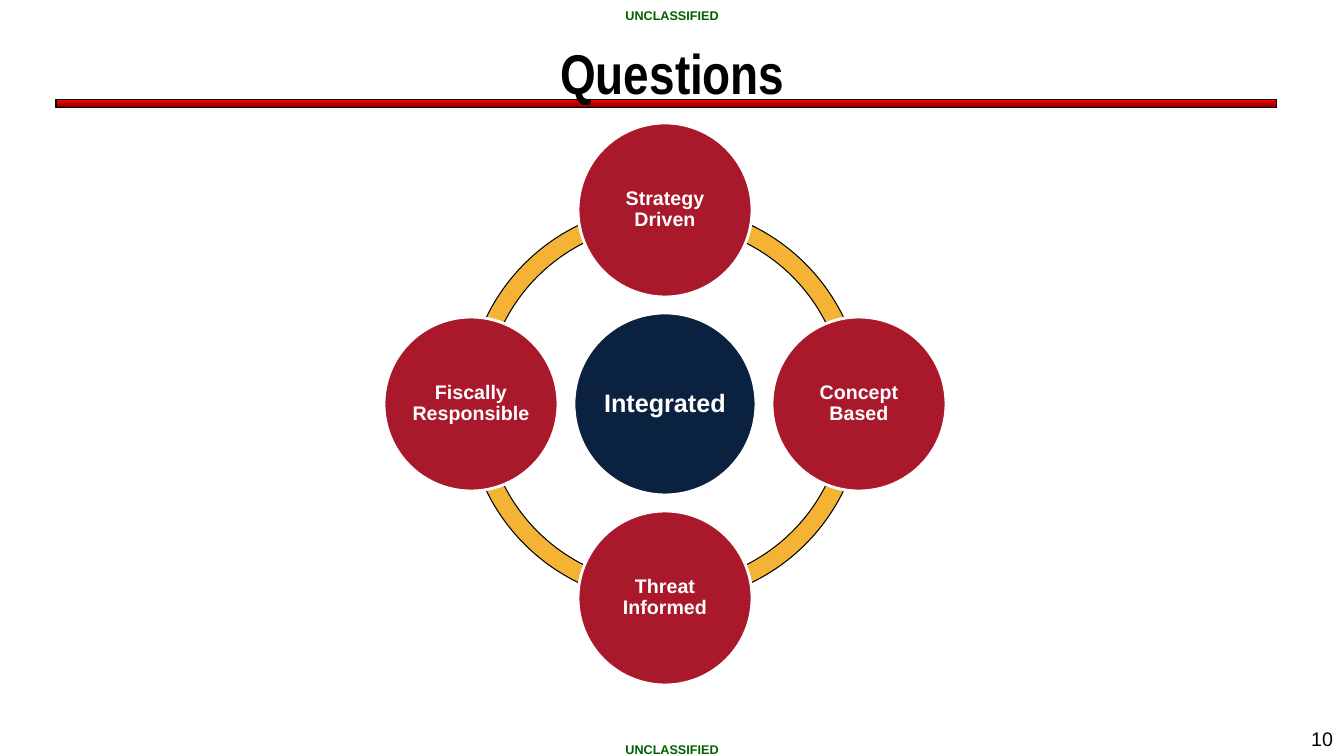
"""Build the Questions slide: four principles on a ring around an integrated core."""
from dataclasses import dataclass

from pptx import Presentation
from pptx import util as u
from pptx.dml.color import RGBColor
from pptx.enum import shapes, text


@dataclass(frozen=True)
class Theme:
    black: str = "000000"
    white: str = "FFFFFF"
    green: str = "006000"
    red: str = "AA182C"
    navy: str = "0A2240"
    gold: str = "F5B335"
    bar: tuple = ("FF0000", "760000")
    font: str = "Arial"
    title_font: str = "Arial Narrow"
    title_size: int = 40
    core_size: int = 18
    node_size: int = 14
    marking_size: int = 9
    hairline: float = 0.75
    outline: int = 2


theme = Theme()
PX = 914400 / 100.8


def write(shape, words, size, color, bold=True, align="CENTER", anchor="MIDDLE", inset=(7, 4), font=theme.font):
    frame = shape.text_frame
    frame.text = words
    frame.word_wrap = True
    frame.vertical_anchor = text.MSO_ANCHOR[anchor]
    frame.margin_left = frame.margin_right = round(inset[0] * PX)
    frame.margin_top = frame.margin_bottom = round(inset[1] * PX)
    para = frame.paragraphs[0]
    para.alignment = text.PP_ALIGN[align]
    span = para.runs[0].font
    span.name, span.size, span.bold = font, u.Pt(size), bold
    span.color.rgb = RGBColor.from_string(color)
    return para


def draw(kind, place, fill, line, width):
    shape = page.shapes.add_shape(kind, *(round(n * PX) for n in place))
    shape.shadow.inherit = False
    if fill:
        shape.fill.solid()
        shape.fill.fore_color.rgb = RGBColor.from_string(fill)
    shape.line.color.rgb = RGBColor.from_string(line)
    shape.line.width = u.Pt(width)
    return shape


deck = Presentation()
deck.slide_width, deck.slide_height = round(1344 * PX), round(756 * PX)
page = deck.slides.add_slide(deck.slide_layouts[5])

bar = draw(shapes.MSO_SHAPE.RECTANGLE, (56, 100, 1221, 8), None, theme.black, theme.hairline)
bar.fill.gradient()
bar.fill.gradient_angle = 270
for stop, color in zip(bar.fill.gradient_stops, theme.bar):
    stop.color.rgb = RGBColor.from_string(color)

title = page.shapes.title
title.left, title.top, title.width, title.height = (round(n * PX) for n in (118, 22, 1109, 100))
write(title, "Questions", theme.title_size, theme.black, inset=(10, 5), font=theme.title_font)
title.element.addprevious(bar.element)

number = page.shapes.add_textbox(*(round(n * PX) for n in (1220, 722, 123, 34)))
write(number, "10", theme.node_size, theme.black, bold=False, align="RIGHT", anchor="TOP", inset=(10, 5))

for top in (734, 0):
    marking = page.shapes.add_textbox(*(round(n * PX) for n in (593, top, 158, 30)))
    write(marking, "UNCLASSIFIED", theme.marking_size, theme.green)

CENTER_X, CENTER_Y = 665, 404
RING, CORE, NODE, REACH = 397, 182, 174, 194

for start, end in ((108, 162), (54, 108), (0, 54), (162, 0)):
    arc = draw(shapes.MSO_SHAPE.BLOCK_ARC, (CENTER_X - RING / 2, CENTER_Y - RING / 2, RING, RING),
               theme.gold, theme.black, theme.hairline)
    for index, value in enumerate((start, end, 0.046)):
        arc.adjustments[index] = value

circles = (
    ("Integrated", 0, 0, CORE, theme.navy, theme.core_size),
    ("Strategy Driven", 0, -1, NODE, theme.red, theme.node_size),
    ("Concept Based", 1, 0, NODE, theme.red, theme.node_size),
    ("Threat Informed", 0, 1, NODE, theme.red, theme.node_size),
    ("Fiscally Responsible", -1, 0, NODE, theme.red, theme.node_size),
)
for words, across, down, size, fill, type_size in circles:
    left = CENTER_X + across * REACH - size / 2
    top = CENTER_Y + down * REACH - size / 2
    circle = draw(shapes.MSO_SHAPE.OVAL, (left, top, size, size), fill, theme.white, theme.outline)
    para = write(circle, words, type_size, theme.white, inset=(2, 2))
    para.line_spacing = 0.9

deck.save("out.pptx")
